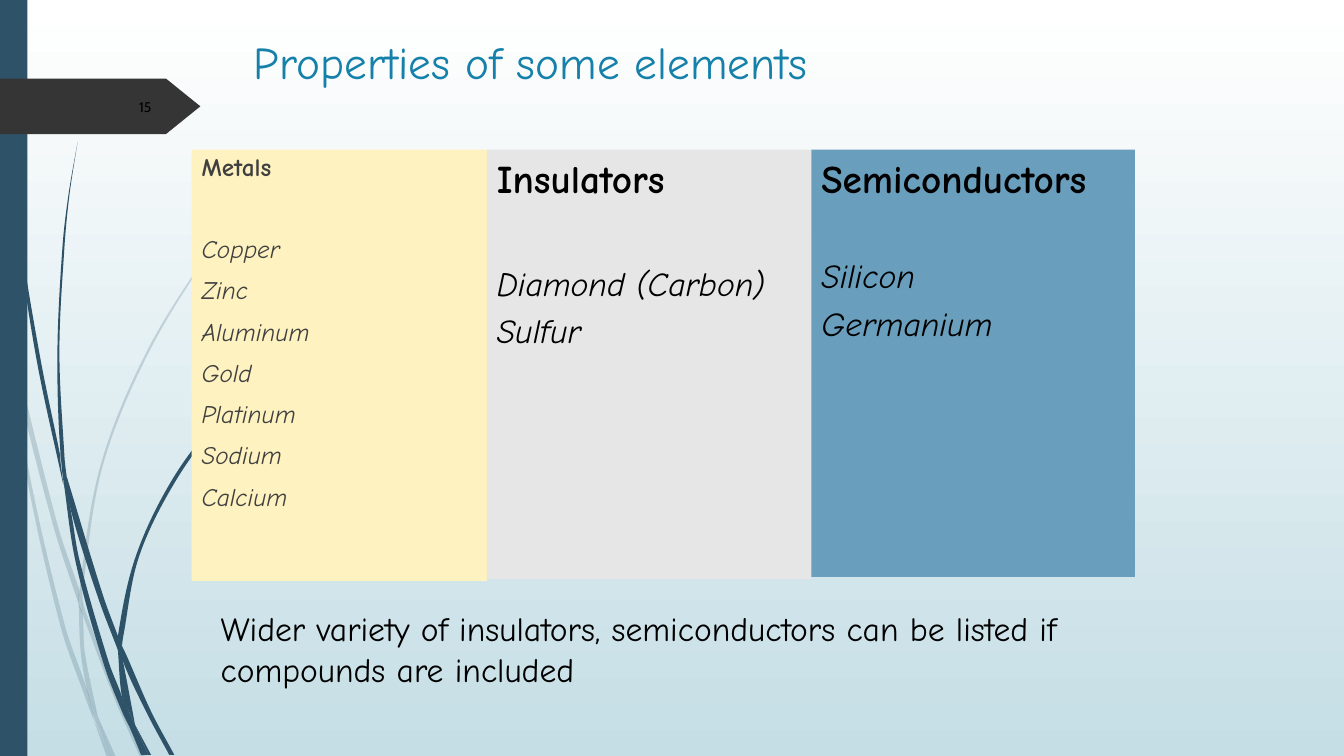
from dataclasses import dataclass

from lxml.etree import SubElement
from pptx import Presentation
from pptx.dml.color import RGBColor
from pptx.enum.shapes import MSO_SHAPE
from pptx.enum.text import MSO_ANCHOR, PP_ALIGN
from pptx.oxml.ns import qn
from pptx.util import Cm, Pt


@dataclass(frozen=True)
class Theme:
    font: str = "Comic Neue"
    number_font: str = "Cabin"
    black: str = "000000"
    title: str = "1581AA"
    metal_text: str = "404040"
    accent: str = "2E5369"
    marker: str = "353535"
    sky: tuple = ("FFFFFF", "C5DEE5")
    metals: str = "FEF2C0"
    insulators: str = "E6E6E6"
    semiconductors: str = "699EBD"
    title_size: float = 32.4
    heading_size: float = 28
    body_size: float = 24
    metal_size: float = 18
    number_size: float = 10


THEME = Theme()


@dataclass(frozen=True)
class Line:
    text: str
    size: float
    color: str = THEME.black
    font: str = THEME.font
    bold: bool = False
    italic: bool = False
    space_before: float = 0
    line_spacing: float = 1.0
    align: PP_ALIGN = PP_ALIGN.LEFT


@dataclass(frozen=True)
class Column:
    left: float
    width: float
    height: float
    fill: str
    heading: str
    elements: tuple
    first_gap: float
    gap: float = 4.8
    heading_size: float = THEME.heading_size
    element_size: float = THEME.body_size
    color: str = THEME.black
    line_spacing: float = 1.0


@dataclass(frozen=True)
class Leaf:
    """A piece of grass between two smooth edges, as x + yj in inches."""
    first_edge: tuple
    second_edge: tuple


COLUMN_TOP = 3.77
COLUMNS = (
    Column(4.83, 7.44, 10.87, THEME.metals, "Metals",
           ("Copper", "Zinc", "Aluminum", "Gold", "Platinum", "Sodium", "Calcium"),
           39.4, 10, THEME.metal_size, THEME.metal_size, THEME.metal_text, 0.9),
    Column(12.27, 8.18, 10.82, THEME.insulators, "Insulators", ("Diamond (Carbon)", "Sulfur"), 44),
    Column(20.45, 8.15, 10.77, THEME.semiconductors, "Semiconductors", ("Silicon", "Germanium"), 38.4),
)

PALE_LEAVES = (
    Leaf((2.82j, .08+3.22j, .1+3.5j), (2.99j, .09+3.44j, .1+3.5j)),
    Leaf((.13+3.45j, .57+5.2j, .79+5.86j), (.13+3.45j, .16+3.76j, .53+5.22j, .78+5.99j)),
    Leaf((.82+5.96j, .85+6.07j, 1.18+6.92j, 1.44+7.51j), (.82+6.1j, 1.14+6.94j, 1.39+7.51j)),
    Leaf((.97+7.11j, 1.15+7.51j), (.97+7.11j, 1.1+7.51j)),
    Leaf((.1+3.5j, .16+3.76j, .29+4.69j, .64+6.19j, .86+6.83j, .92+7.07j, .93+7.14j),
         (.1+3.5j, .26+4.7j, .6+6.21j, .85+6.93j, .93+7.14j)),
    Leaf((.78+5.99j, .8+6.46j, .86+6.83j, .89+6.92j, .97+7.11j),
         (.78+5.99j, .82+6.1j, .84+6.46j, .96+7.06j, .97+7.11j)),
    Leaf((2.89+1.53j, 2.68+1.75j, 2.48+1.97j, 2.11+2.44j, 1.46+3.48j, 1+4.61j, .79+5.84j, .82+5.96j),
         (2.89+1.54j, 2.68+1.75j, 2.49+1.98j, 2.12+2.45j, 1.48+3.49j, 1.02+4.62j, .82+5.84j, .82+5.96j)),
    Leaf((.93+7.14j, 1.1+7.51j), (.93+7.14j, 1.06+7.51j)),
    Leaf((.78+5.86j, .82+5.96j, .82+6.1j), (.78+5.86j, .78+5.99j, .81+6.08j, .82+6.1j)),
    Leaf((.86+6.83j, .89+6.92j, .97+7.11j, 1.1+7.51j), (.86+6.83j, .92+7.07j, .94+7.14j, 1.1+7.51j)),
)
DARK_LEAVES = (
    Leaf((.03+0j, .04+.48j, .07+1.1j, .18+2.33j, .36+3.55j, .62+4.77j, .63+4.81j),
         (.04+0j, .05+.48j, .08+1.09j, .2+2.32j, .4+3.55j, .6+4.53j, .6+4.57j, .63+4.81j)),
    Leaf((.66+4.72j, 1.02+5.9j, 1.17+6.31j), (.66+4.72j, .7+5.05j, .97+5.92j, 1.17+6.45j)),
    Leaf((1.21+6.41j, 1.25+6.49j, 1.5+7.06j, 1.73+7.49j), (1.21+6.41j, 1.22+6.56j, 1.46+7.08j, 1.68+7.49j)),
    Leaf((.63+4.77j, .7+5.05j, .79+5.56j, 1.08+6.57j, 1.21+6.91j, 1.29+7.22j),
         (.63+4.77j, .75+5.57j, 1.03+6.59j, 1.22+7.08j, 1.29+7.22j)),
    Leaf((.77+1.41j, .69+1.93j, .64+2.45j, .59+3.49j, .64+4.53j, .66+4.72j),
         (.77+1.41j, .68+1.93j, .62+2.45j, .57+3.49j, .6+4.49j, .66+4.72j)),
    Leaf((1.34+7.19j, 1.5+7.49j), (1.34+7.19j, 1.47+7.49j)),
    Leaf((.6+4.49j, .66+4.72j, .7+5.05j), (.6+4.49j, .63+4.77j, .7+5.05j)),
    Leaf((2.87+3.44j, 2.55+3.73j, 2.24+4.05j, 1.72+4.74j, 1.35+5.51j, 1.17+6.31j, 1.21+6.41j),
         (2.88+3.44j, 2.55+3.74j, 2.26+4.06j, 1.75+4.76j, 1.38+5.52j, 1.22+6.33j, 1.21+6.41j)),
    Leaf((1.29+7.22j, 1.44+7.49j), (1.29+7.22j, 1.4+7.49j)),
    Leaf((1.17+6.45j, 1.2+6.51j, 1.22+6.56j, 1.34+7.19j), (1.17+6.45j, 1.21+6.91j, 1.28+7.06j, 1.34+7.19j)),
    Leaf((1.17+6.31j, 1.21+6.41j, 1.22+6.56j), (1.17+6.31j, 1.17+6.45j, 1.22+6.56j)),
    Leaf((1.21+6.91j, 1.28+7.06j, 1.34+7.19j, 1.47+7.49j), (1.21+6.91j, 1.29+7.22j, 1.44+7.49j)),
)


def edge_curves(points: tuple) -> list:
    """Give two control points and an end point for each span of a smooth edge."""
    slopes = []
    for i in range(len(points)):
        near = points[max(i - 1, 0):i + 2]
        slopes.append((near[-1] - near[0]) / sum(abs(b - a) for a, b in zip(near, near[1:])))
    return [(a + abs(b - a) / 3 * slope_a, b - abs(b - a) / 3 * slope_b, b)
            for a, b, slope_a, slope_b in zip(points, points[1:], slopes, slopes[1:])]


def paint(shape, color: str) -> None:
    shape.fill.solid()
    shape.fill.fore_color.rgb = RGBColor.from_string(color)
    shape.line.fill.background()
    shape.shadow.inherit = False


def add_leaf(slide, leaf: Leaf, opacity: int) -> None:
    back_edge = leaf.second_edge[::-1]
    spans = edge_curves(leaf.first_edge) + [back_edge[:1]] + edge_curves(back_edge)
    start, *ends = [(Cm(p.real * 2.54), Cm(p.imag * 2.54))
                    for p in (leaf.first_edge[0], *(span[-1] for span in spans))]
    builder = slide.shapes.build_freeform(*start)
    builder.add_line_segments(ends, close=True)
    shape = builder.convert_to_shape()
    paint(shape, THEME.accent)
    for segment, span in zip(list(shape.element.iter(qn("a:lnTo"))), spans):
        if len(span) == 3:
            segment.tag = qn("a:cubicBezTo")
            for order, p in enumerate(span[:2]):
                x, y = Cm(p.real * 2.54) - shape.left, Cm(p.imag * 2.54) - shape.top
                control = SubElement(segment, qn("a:pt"), x=str(x), y=str(y))
                segment.insert(order, control)
    if opacity < 100:
        color = shape.element.spPr.find(qn("a:solidFill")).find(qn("a:srgbClr"))
        SubElement(color, qn("a:alpha"), val=str(opacity * 1000))


def add_panel(slide, kind: MSO_SHAPE, box: tuple, color: str):
    shape = slide.shapes.add_shape(kind, *map(Cm, box))
    paint(shape, color)
    return shape


def write(shape, lines: list, anchor: MSO_ANCHOR = MSO_ANCHOR.TOP) -> None:
    frame = shape.text_frame
    frame.word_wrap = True
    frame.vertical_anchor = anchor
    for index, line in enumerate(lines):
        paragraph = frame.add_paragraph() if index else frame.paragraphs[0]
        paragraph.text, paragraph.alignment = line.text, line.align
        paragraph.space_before, paragraph.line_spacing = Pt(line.space_before), line.line_spacing
        font = paragraph.font
        font.name, font.size, font.bold, font.italic = line.font, Pt(line.size), line.bold, line.italic
        font.color.rgb = RGBColor.from_string(line.color)


def add_column(slide, column: Column) -> None:
    box = (column.left, COLUMN_TOP, column.width, column.height)
    lines = [Line(column.heading, column.heading_size, column.color, bold=True, line_spacing=column.line_spacing)]
    for index, element in enumerate(column.elements):
        lines.append(Line(element, column.element_size, column.color, italic=True,
                          space_before=column.gap if index else column.first_gap,
                          line_spacing=column.line_spacing))
    write(add_panel(slide, MSO_SHAPE.RECTANGLE, box, column.fill), lines)


def paint_background(slide) -> None:
    fill = slide.background.fill
    fill.gradient()
    fill.gradient_angle = 270
    for position, (stop, color) in enumerate(zip(fill.gradient_stops, THEME.sky)):
        stop.position, stop.color.rgb = position, RGBColor.from_string(color)


def main() -> None:
    presentation = Presentation()
    presentation.slide_width, presentation.slide_height = Cm(33.87), Cm(19.05)
    slide = presentation.slides.add_slide(presentation.slide_layouts[6])
    paint_background(slide)
    for leaves, opacity in ((PALE_LEAVES, 20), (DARK_LEAVES, 100)):
        for leaf in leaves:
            add_leaf(slide, leaf, opacity)
    add_panel(slide, MSO_SHAPE.RECTANGLE, (0, 0, 0.69, 19.05), THEME.accent)
    marker = add_panel(slide, MSO_SHAPE.PENTAGON, (0, 1.98, 5.05, 1.4), THEME.marker)
    marker.adjustments[0] = 0.62
    number = Line("15", THEME.number_size, font=THEME.number_font, align=PP_ALIGN.RIGHT)
    title = Line("Properties of some elements", THEME.title_size, THEME.title)
    remark = Line("Wider variety of insulators, semiconductors can be listed if compounds are included",
                  THEME.body_size)
    for box, line, anchor in (((1.91, 2.18, 2.16, 1.02), number, MSO_ANCHOR.MIDDLE),
                              ((6.15, 0.74, 21.59, 1.22), title, MSO_ANCHOR.TOP),
                              ((5.31, 15.2, 22.15, 2.31), remark, MSO_ANCHOR.TOP)):
        write(slide.shapes.add_textbox(*map(Cm, box)), [line], anchor)
    for column in COLUMNS:
        add_column(slide, column)
    presentation.save("out.pptx")


if __name__ == "__main__":
    main()
